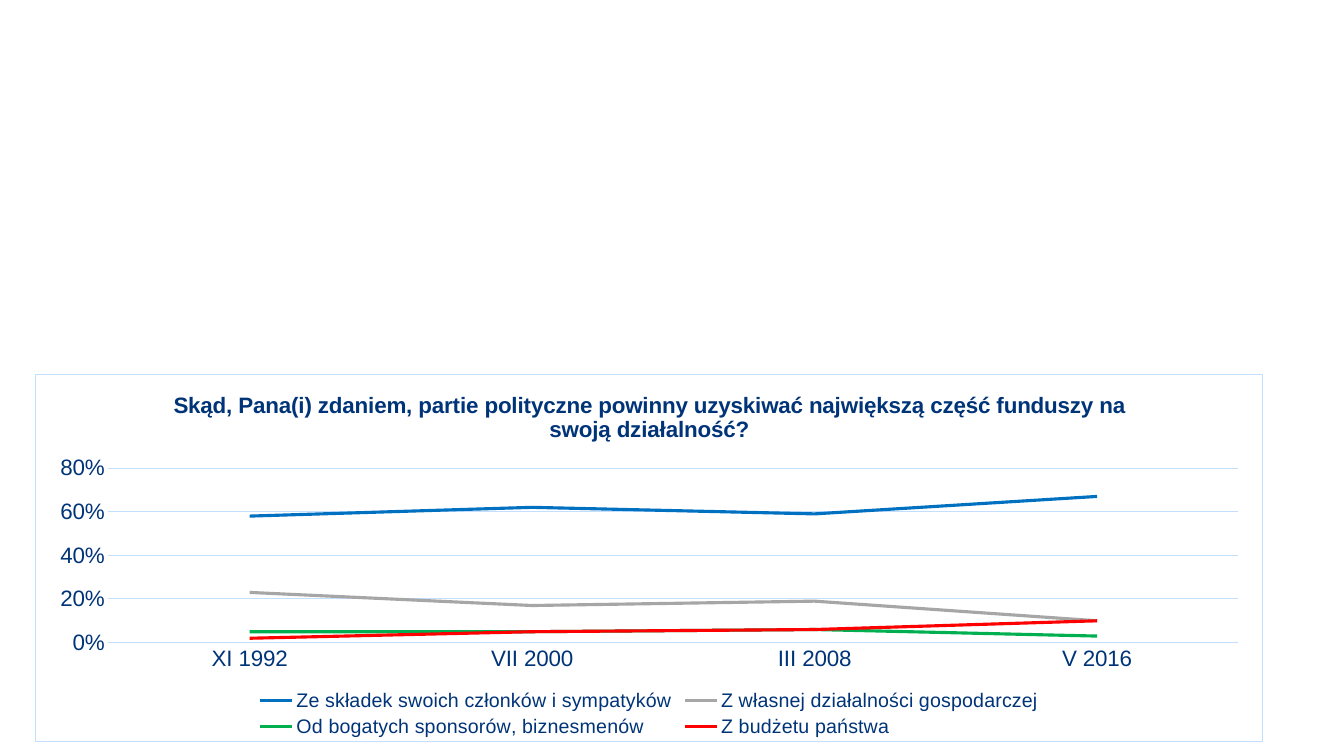
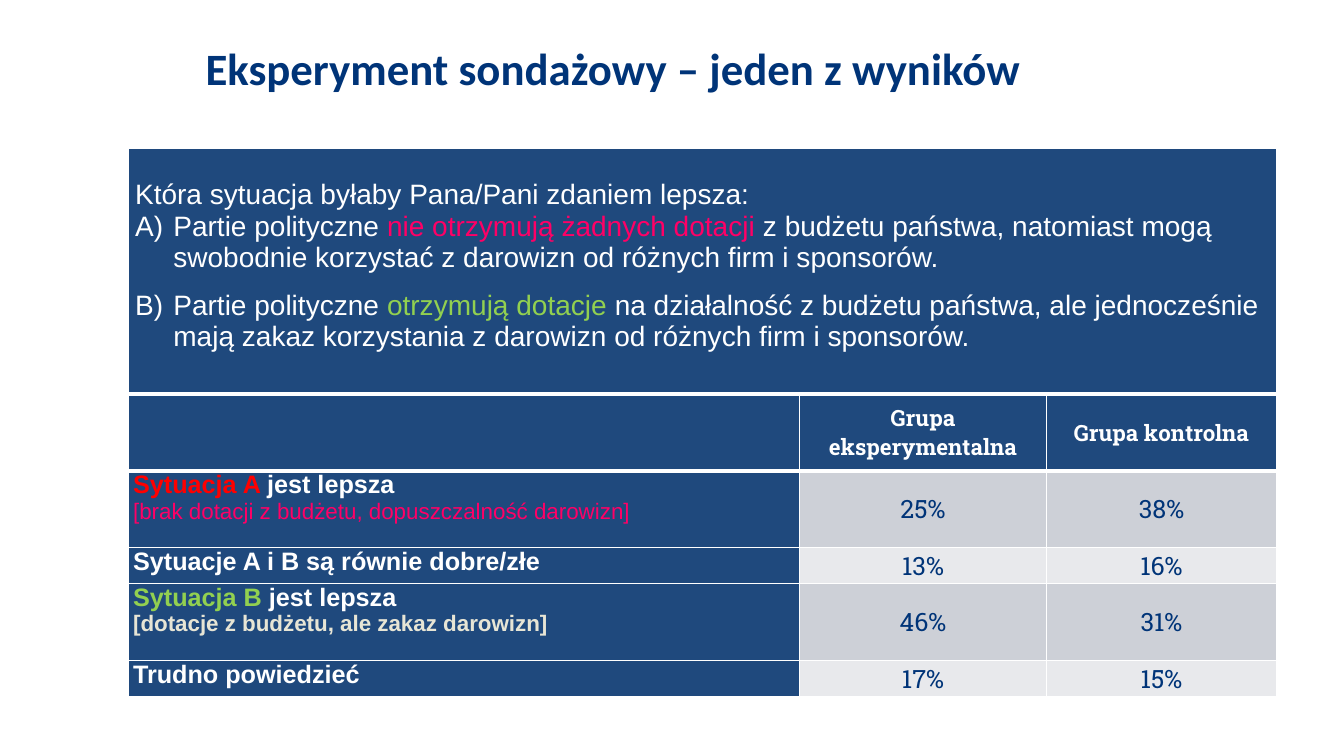
from lxml import etree
from pptx import Presentation
from pptx import util as u
from pptx.chart.data import CategoryChartData
from pptx.dml.color import RGBColor
from pptx.enum import chart as ch, text
from pptx.oxml import parse_xml
from pptx.oxml.ns import nsdecls, qn

NAVY, PANEL, WHITE, GRID = "003478", "1F497D", "FFFFFF", "C4DEFF"
PINK, GREEN, RED, CREAM = "FF0066", "92D050", "FF0000", "E7E5D5"
BANDS = ("CDD0D7", "E8E9EC")
BODY, HEADING, FIGURES = "Arial", "Calibri", "Roboto Slab"

FUNDING_QUESTION = ("Skąd, Pana(i) zdaniem, partie polityczne powinny uzyskiwać "
                    "największą część funduszy na swoją działalność?")
SURVEYS = ("XI 1992", "VII 2000", "III 2008", "V 2016")
SOURCES = [
    ("Ze składek swoich członków i sympatyków", "0070C0", (0.58, 0.62, 0.59, 0.67)),
    ("Z własnej działalności gospodarczej", "A6A6A6", (0.23, 0.17, 0.19, 0.1)),
    ("Od bogatych sponsorów, biznesmenów", "00B050", (0.05, 0.05, 0.06, 0.03)),
    ("Z budżetu państwa", RED, (0.02, 0.05, 0.06, 0.1)),
]

TITLE = "Eksperyment sondażowy – jeden z wyników"
# Runs are (text, colour).
QUESTION = [("Która sytuacja byłaby Pana/Pani zdaniem lepsza:", WHITE)]
OPTIONS = [
    [("Partie polityczne ", WHITE), ("nie otrzymują żadnych dotacji ", PINK),
     ("z budżetu państwa, natomiast mogą swobodnie korzystać z darowizn "
      "od różnych firm i sponsorów.", WHITE)],
    [("Partie polityczne ", WHITE), ("otrzymują dotacje ", GREEN),
     ("na działalność z budżetu państwa, ale jednocześnie mają zakaz "
      "korzystania z darowizn od różnych firm i sponsorów.", WHITE)],
]
GROUPS = ("Grupa eksperymentalna", "Grupa kontrolna")
# Answer runs, explanation (text, colour, bold) or None, result per group.
ANSWERS = [
    ([("Sytuacja A ", RED), ("jest lepsza", WHITE)],
     ("[brak dotacji z budżetu, dopuszczalność darowizn]", PINK, False), ("25%", "38%")),
    ([("Sytuacje A i B są równie dobre/złe", WHITE)], None, ("13%", "16%")),
    ([("Sytuacja B", GREEN), (" jest lepsza", WHITE)],
     ("[dotacje z budżetu, ale zakaz darowizn]", CREAM, True), ("46%", "31%")),
    ([("Trudno powiedzieć", WHITE)], None, ("17%", "15%")),
]
TABLE_LEFT, QUESTION_TOP, QUESTION_HEIGHT = 1.27, 1.47, 2.44
COLUMNS = (6.66, 2.45, 2.28)
TALL, SHORT = 0.76, 0.36


def rgb(value):
    return RGBColor.from_string(value)


def style(font, size, color, name=BODY, bold=False):
    font.size, font.name, font.bold = u.Pt(size), name, bold
    font.color.rgb = rgb(color)


def write(paragraph, runs, size, name=BODY, bold=False):
    for words, color in runs:
        run = paragraph.add_run()
        run.text = words
        style(run.font, size, color, name, bold)


def paint_cell(cell, color, side_inset, bottom_line=1):
    """Fill a cell and give it white borders and narrow insets."""
    cell.margin_left = cell.margin_right = u.Inches(side_inset)
    cell.margin_top = cell.margin_bottom = 0
    properties = cell._tc.get_or_add_tcPr()
    for side, width in (("L", 1), ("R", 1), ("T", 1), ("B", bottom_line)):
        line = etree.SubElement(properties, qn("a:ln" + side), w=str(u.Pt(width)))
        fill = etree.SubElement(line, qn("a:solidFill"))
        etree.SubElement(fill, qn("a:srgbClr"), val=WHITE)
    cell.fill.solid()
    cell.fill.fore_color.rgb = rgb(color)


def add_table(slide, top, widths, heights):
    frame = slide.shapes.add_table(
        len(heights), len(widths), u.Inches(TABLE_LEFT), u.Inches(top),
        u.Inches(sum(widths)), u.Inches(sum(heights)))
    table = frame.table
    for column, width in zip(table.columns, widths):
        column.width = u.Inches(width)
    for row, height in zip(table.rows, heights):
        row.height = u.Inches(height)
    return table


def frame_chart(chart):
    """Give the chart area a white fill and a thin border."""
    area = parse_xml(
        f'<c:spPr {nsdecls("c", "a")}>'
        f'<a:solidFill><a:srgbClr val="{WHITE}"/></a:solidFill>'
        f'<a:ln w="{u.Pt(0.75)}"><a:solidFill><a:srgbClr val="{GRID}"/></a:solidFill></a:ln>'
        '</c:spPr>')
    chart._chartSpace.find(qn("c:chart")).addnext(area)


def add_funding_chart(slide):
    data = CategoryChartData(number_format="0%")
    data.categories = SURVEYS
    for name, _, shares in SOURCES:
        data.add_series(name, shares)
    chart = slide.shapes.add_chart(
        ch.XL_CHART_TYPE.LINE, u.Inches(0.35), u.Inches(3.71),
        u.Inches(12.18), u.Inches(3.65), data).chart
    style(chart.font, 16, NAVY)
    frame_chart(chart)

    chart.has_title = True
    heading = chart.chart_title.text_frame.paragraphs[0]
    write(heading, [(FUNDING_QUESTION, NAVY)], 16, bold=True)
    chart.chart_title.include_in_layout = False
    chart.has_legend = True
    chart.legend.position = ch.XL_LEGEND_POSITION.BOTTOM
    chart.legend.include_in_layout = False
    style(chart.legend.font, 14, NAVY)

    shares_axis, survey_axis = chart.value_axis, chart.category_axis
    shares_axis.minimum_scale, shares_axis.maximum_scale = 0, 0.8
    shares_axis.major_unit = 0.2
    shares_axis.tick_labels.number_format = "0%"
    shares_axis.tick_labels.number_format_is_linked = False
    shares_axis.format.line.fill.background()
    for axis in (shares_axis, survey_axis):
        axis.major_tick_mark = axis.minor_tick_mark = ch.XL_TICK_MARK.NONE
    for line in (shares_axis.major_gridlines.format.line, survey_axis.format.line):
        line.color.rgb = rgb(GRID)
        line.width = u.Pt(0.75)

    chart.plots[0].vary_by_categories = False
    for series, (_, color, _) in zip(chart.plots[0].series, SOURCES):
        series.smooth = False
        series.marker.style = ch.XL_MARKER_STYLE.NONE
        series.format.line.color.rgb = rgb(color)
        series.format.line.width = u.Pt(2.25)


def add_title(slide):
    box = slide.shapes.add_textbox(
        u.Inches(1.94), u.Inches(0.44), u.Inches(10.32), u.Inches(0.74))
    box.text_frame.word_wrap = True
    paragraph = box.text_frame.paragraphs[0]
    paragraph.line_spacing = 0.85
    write(paragraph, [(TITLE, NAVY)], 32, HEADING, True)


def add_question(slide):
    cell = add_table(slide, QUESTION_TOP, [sum(COLUMNS)], [QUESTION_HEIGHT]).cell(0, 0)
    paint_cell(cell, PANEL, 0.07, 3)
    cell.margin_top = u.Inches(0.31)
    write(cell.text_frame.paragraphs[0], QUESTION, 20)
    for index, option in enumerate(OPTIONS):
        paragraph = cell.text_frame.add_paragraph()
        properties = paragraph._p.get_or_add_pPr()
        properties.set("marL", str(u.Inches(0.38)))
        properties.set("indent", str(-u.Inches(0.38)))
        etree.SubElement(properties, qn("a:buAutoNum"), type="alphaUcParenR")
        paragraph.space_before = u.Pt(12 * index)
        write(paragraph, option, 20)


def add_results(slide):
    heights = [TALL] + [TALL if note else SHORT for _, note, _ in ANSWERS]
    table = add_table(slide, QUESTION_TOP + QUESTION_HEIGHT, COLUMNS, heights)

    def centre(row, column, words, size, color, bold):
        cell = table.cell(row, column)
        cell.vertical_anchor = text.MSO_ANCHOR.MIDDLE
        paragraph = cell.text_frame.paragraphs[0]
        paragraph.alignment = text.PP_ALIGN.CENTER
        write(paragraph, [(words, color)], size, FIGURES, bold)

    for column in range(len(COLUMNS)):
        paint_cell(table.cell(0, column), PANEL, 0.05, 3)
    for column, group in enumerate(GROUPS, 1):
        centre(0, column, group, 16, WHITE, True)

    for row, (answer, note, results) in enumerate(ANSWERS, 1):
        label = table.cell(row, 0)
        paint_cell(label, PANEL, 0.05)
        write(label.text_frame.paragraphs[0], answer, 18, bold=True)
        if note:
            words, color, bold = note
            write(label.text_frame.add_paragraph(), [(words, color)], 16, bold=bold)
        for column, result in enumerate(results, 1):
            paint_cell(table.cell(row, column), BANDS[(row - 1) % 2], 0.05)
            centre(row, column, result, 18, NAVY, False)


def main():
    deck = Presentation()
    deck.slide_width, deck.slide_height = u.Inches(13.33), u.Inches(7.5)
    blank = deck.slide_layouts[6]
    add_funding_chart(deck.slides.add_slide(blank))
    experiment = deck.slides.add_slide(blank)
    add_title(experiment)
    add_results(experiment)
    add_question(experiment)
    deck.save("out.pptx")


if __name__ == "__main__":
    main()
